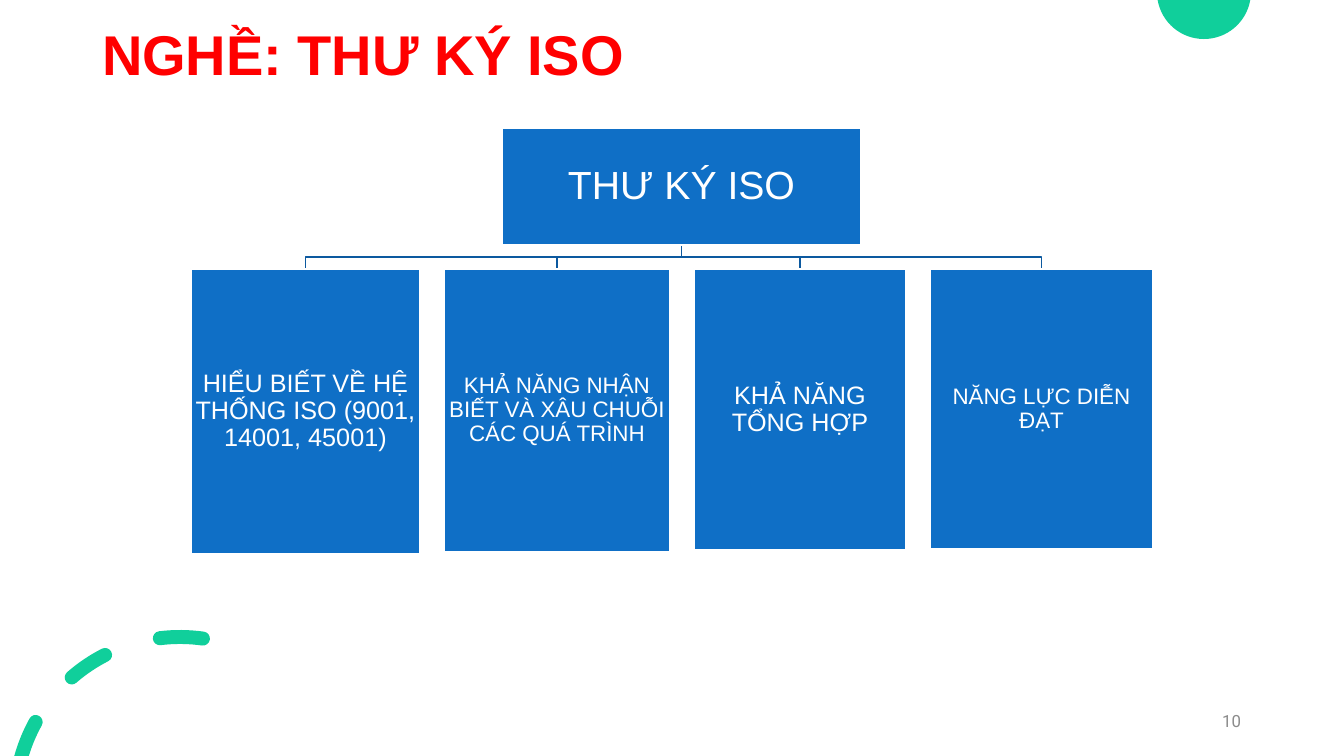
"""Build the ISO secretary slide: one role above four required abilities."""
from dataclasses import dataclass
from math import acos, cos, degrees, radians, sin, tan

from pptx import Presentation
from pptx import util as u
from pptx.dml.color import RGBColor
from pptx.enum import shapes, text
from pptx.oxml.ns import qn

Point = tuple[float, float]

WIDTH, HEIGHT = 1344, 756
SCALE = 12192000 / WIDTH
GAP = 24
ABILITIES_LEFT, ABILITIES_TOP = 191, 269
ROLE_LEFT, ROLE_TOP = 502, 128
RING_CENTER, RING_RADIUS, DASH_HALF = (180, 802), 165, 7
DISC_CENTER, DISC_RADIUS = (1204, -8), 47
COLORS = {"green": "10CF9B", "red": "FF0000", "grey": "8C8C8C",
          "blue": "0F6FC6", "line": "0C599F", "white": "FFFFFF"}


@dataclass(frozen=True)
class Dash:
    start: int
    end: int
    cut_by_edge: bool = False


@dataclass(frozen=True)
class Card:
    label: str
    width: int
    height: int
    size: int
    inset: int = 1


DASHES = [Dash(-74, -61, True), Dash(-41, -27), Dash(-7, 8)]
ROLE = Card("THƯ KÝ ISO", 359, 117, 28, 2)
ABILITIES = [
    Card("HIỂU BIẾT VỀ HỆ THỐNG ISO (9001, 14001, 45001)", 229, 285, 18),
    Card("KHẢ NĂNG NHẬN BIẾT VÀ XÂU CHUỖI CÁC QUÁ TRÌNH", 226, 283, 16),
    Card("KHẢ NĂNG TỔNG HỢP", 212, 281, 18),
    Card("NĂNG LỰC DIỄN ĐẠT", 223, 280, 16),
]


def px(length: float) -> u.Emu:
    """Turn pixels into EMU."""
    return u.Emu(round(length * SCALE))


def rgb(name: str) -> RGBColor:
    """Look up a named colour."""
    return RGBColor.from_string(COLORS[name])


def polar(center: Point, radius: float, angle: float) -> Point:
    """Find a point by its clockwise angle from the top."""
    turn = radians(angle)
    return center[0] + radius * sin(turn), center[1] - radius * cos(turn)


def arc(center: Point, radius: float, start: float, end: float) -> list[Point]:
    """Give two control points and the end of a curve along a circle."""
    reach = radius * 4 / 3 * tan(radians(end - start) / 4)
    points = []
    for angle, pull in ((start, reach), (end, -reach)):
        x, y = polar(center, radius, angle)
        turn = radians(angle)
        points.append((x + pull * cos(turn), y + pull * sin(turn)))
    return points + [polar(center, radius, end)]


def cap(angle: float, turn: int) -> list[Point]:
    """Round off one end of a dash."""
    tip = polar(RING_CENTER, RING_RADIUS, angle)
    first = angle + turn
    return arc(tip, DASH_HALF, first, first + 90) + arc(tip, DASH_HALF, first + 90, first + 180)


def dash_contour(dash: Dash) -> list[Point]:
    """Outline a dash of the ring, flat where the slide edge cuts it."""
    outer, inner = RING_RADIUS + DASH_HALF, RING_RADIUS - DASH_HALF
    outer_start = inner_start = dash.start
    if dash.cut_by_edge:
        drop = RING_CENTER[1] - HEIGHT
        outer_start, inner_start = (-degrees(acos(drop / side)) for side in (outer, inner))
    points = [polar(RING_CENTER, outer, outer_start)]
    points += arc(RING_CENTER, outer, outer_start, dash.end)
    points += cap(dash.end, 0)
    points += arc(RING_CENTER, inner, dash.end, inner_start)
    return points if dash.cut_by_edge else points + cap(dash.start, 180)


def disc_contour() -> list[Point]:
    """Outline the part of the disc below the top edge."""
    edge = degrees(acos(DISC_CENTER[1] / DISC_RADIUS))
    return ([polar(DISC_CENTER, DISC_RADIUS, edge)]
            + arc(DISC_CENTER, DISC_RADIUS, edge, 180)
            + arc(DISC_CENTER, DISC_RADIUS, 180, 360 - edge))


def draw_path(slide, contours: list[list[Point]], close: bool):
    """Draw a shadowless outline through pixel points."""
    builder = slide.shapes.build_freeform(*map(px, contours[0][0]))
    for index, contour in enumerate(contours):
        start, *others = [(px(x), px(y)) for x, y in contour]
        if index:
            builder.move_to(*start)
        builder.add_line_segments(others, close=close)
    outline = builder.convert_to_shape()
    outline.shadow.inherit = False
    return outline


def draw_ornament(slide, contours: list[list[Point]]) -> None:
    """Draw a green ornament with curved contours."""
    ornament = draw_path(slide, contours, True)
    segments = list(ornament.element.iter(qn("a:lnTo")))
    for index in range(0, len(segments), 3):
        curve = segments[index].makeelement(qn("a:cubicBezTo"))
        segments[index].addprevious(curve)
        for segment in segments[index:index + 3]:
            curve.append(segment[0])
            segment.getparent().remove(segment)
    ornament.fill.solid()
    ornament.fill.fore_color.rgb = rgb("green")
    ornament.line.fill.background()


def write(shape, words: str, font: str, size: int, color: str, align) -> None:
    """Fill a shape with one formatted paragraph."""
    frame = shape.text_frame
    frame.word_wrap = True
    frame.text = words
    paragraph = frame.paragraphs[0]
    paragraph.alignment = align
    paragraph.line_spacing = 0.9
    paragraph.font.name = font
    paragraph.font.size = u.Pt(size)
    paragraph.font.color.rgb = rgb(color)


def draw_branch(slide, start: Point, end: Point) -> None:
    """Draw a right-angled branch from the role to an ability."""
    middle = (start[1] + end[1]) / 2
    branch = draw_path(slide, [[start, (start[0], middle), (end[0], middle), end]], False)
    branch.fill.background()
    branch.line.color.rgb = rgb("line")
    branch.line.width = u.Pt(1)


def draw_card(slide, card: Card, left: int, top: int) -> None:
    """Draw a blue card with its label."""
    box = slide.shapes.add_shape(shapes.MSO_SHAPE.RECTANGLE, px(left), px(top),
                                 px(card.width), px(card.height))
    box.shadow.inherit = False
    box.fill.solid()
    box.fill.fore_color.rgb = rgb("blue")
    box.line.color.rgb = rgb("white")
    box.line.width = u.Pt(1)
    frame = box.text_frame
    frame.margin_left = frame.margin_right = px(card.inset)
    frame.margin_top = frame.margin_bottom = px(card.inset)
    frame.vertical_anchor = text.MSO_ANCHOR.MIDDLE
    write(box, card.label, "Arial", card.size, "white", text.PP_ALIGN.CENTER)


def main() -> None:
    """Build and save the slide."""
    deck = Presentation()
    deck.slide_width, deck.slide_height = px(WIDTH), px(HEIGHT)
    slide = deck.slides.add_slide(deck.slide_layouts[5])
    draw_ornament(slide, [disc_contour()])
    draw_ornament(slide, [dash_contour(dash) for dash in DASHES])

    title = slide.shapes.title
    title.left, title.top, title.width, title.height = map(px, (92, 18, 1186, 146))
    title.text_frame.vertical_anchor = text.MSO_ANCHOR.TOP
    title.text_frame.margin_top = px(9)
    write(title, "NGHỀ: THƯ KÝ ISO", "Arial", 40, "red", text.PP_ALIGN.LEFT)
    title.text_frame.paragraphs[0].font.bold = True

    page_number = slide.shapes.add_textbox(px(949), px(701), px(302), px(40))
    page_number.text_frame.vertical_anchor = text.MSO_ANCHOR.MIDDLE
    write(page_number, "10", "Roboto", 12, "grey", text.PP_ALIGN.RIGHT)
    page_number.text_frame.paragraphs[0].line_spacing = 1.0

    lefts = [ABILITIES_LEFT + sum(card.width + GAP for card in ABILITIES[:index])
             for index in range(len(ABILITIES))]
    role_foot = (ROLE_LEFT + ROLE.width / 2, ROLE_TOP + ROLE.height)
    for ability, left in zip(ABILITIES, lefts):
        draw_branch(slide, role_foot, (left + ability.width / 2, ABILITIES_TOP))
    draw_card(slide, ROLE, ROLE_LEFT, ROLE_TOP)
    for ability, left in zip(ABILITIES, lefts):
        draw_card(slide, ability, left, ABILITIES_TOP)
    deck.save("out.pptx")


if __name__ == "__main__":
    main()
